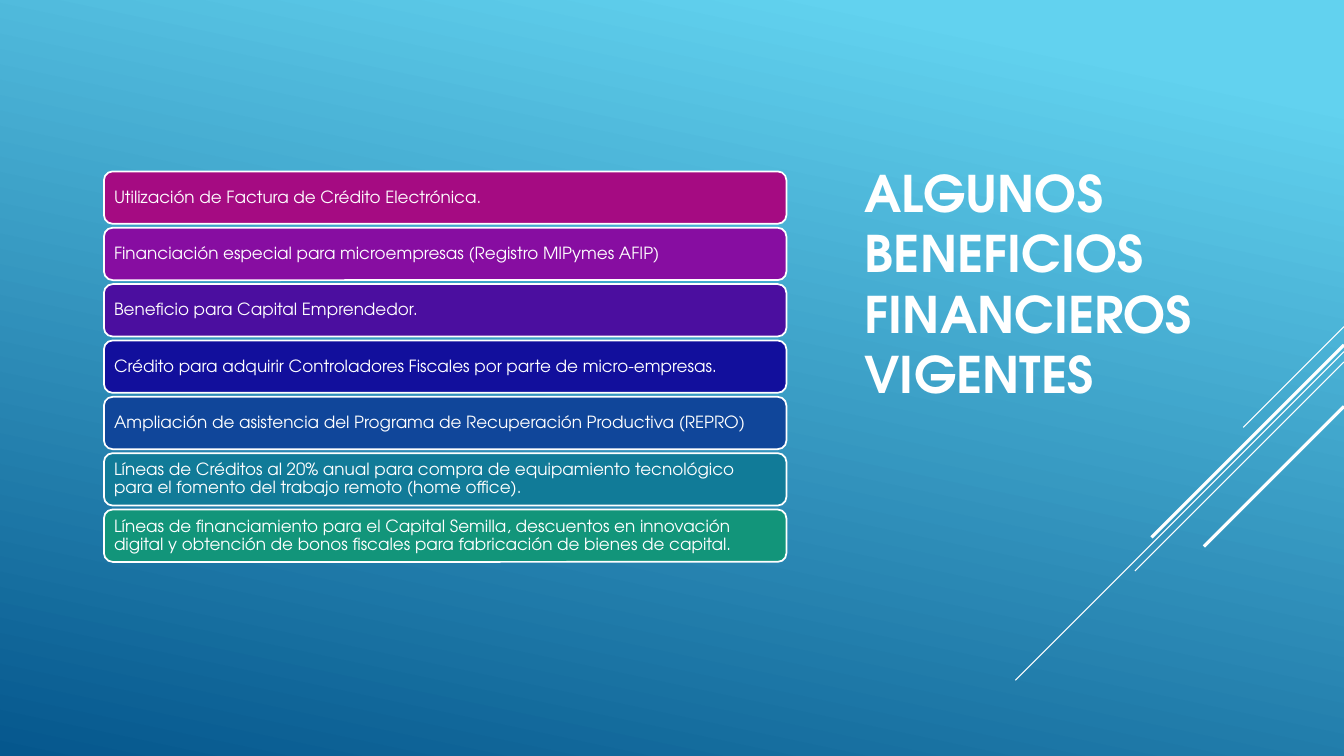
import dataclasses
import pptx
import pptx.dml.color
import pptx.enum.shapes
import pptx.enum.text
import pptx.oxml.ns
import pptx.util
import lxml.etree

Cm = pptx.util.Cm
Pt = pptx.util.Pt
Rgb = pptx.dml.color.RGBColor.from_string
Align = pptx.enum.text.PP_ALIGN
Anchor = pptx.enum.text.MSO_ANCHOR
Fit = pptx.enum.text.MSO_AUTO_SIZE


@dataclasses.dataclass(frozen=True)
class Theme:
    font: str = "TeX Gyre Adventor"
    ink: str = "FFFFFF"
    sky: str = "62D2EF"
    sea: str = "05578D"
    head: int = 36
    body: int = 12
    edge: float = 1.25


WIDE, HIGH = 33.87, 19.05
CARDS = [
    ("A50B82", "Utilización de Factura de Crédito Electrónica."),
    ("870DA1", "Financiación especial para microempresas (Registro MIPymes AFIP)"),
    ("4B0E9F", "Beneficio para Capital Emprendedor."),
    ("120F9C", "Crédito para adquirir Controladores Fiscales por parte de micro-empresas."),
    ("10469A", "Ampliación de asistencia del Programa de Recuperación Productiva (REPRO)"),
    ("117B98", "Líneas de Créditos al 20% anual para compra de equipamiento "
               "tecnológico para el fomento del trabajo remoto (home office)."),
    ("12957A", "Líneas de financiamiento para el Capital Semilla, descuentos en "
               "innovación digital y obtención de bonos fiscales para fabricación "
               "de bienes de capital."),
]
LEFT, TOP, STEP = 2.62, 4.32, 1.42
RAYS = [
    (8.23, 2.54, 0.75),
    (8.86, 8.28, 0.75),
    (9.12, 5.27, 0.75),
    (8.69, 4.85, 2.25),
    (10.24, 3.53, 2.25),
]


def apply(item, form):
    for name, value in form.items():
        setattr(item, name, value)


class Maker:
    def __init__(self, theme, slide):
        self.theme = theme
        self.slide = slide

    def back(self):
        fill = self.slide.background.fill
        fill.gradient()
        fill.gradient_angle = 258
        stops = [(0.1, self.theme.sky), (1, self.theme.sea)]
        for stop, (place, color) in zip(fill.gradient_stops, stops):
            stop.position = place
            stop.color.rgb = Rgb(color)

    def label(self, shape, text, size, bold, space, inset):
        frame = shape.text_frame
        frame.text = text
        side, edge = inset
        apply(frame, {
            "word_wrap": True, "auto_size": Fit.NONE,
            "vertical_anchor": Anchor.MIDDLE,
            "margin_left": Cm(side), "margin_right": Cm(side),
            "margin_top": Cm(edge), "margin_bottom": Cm(edge),
        })
        para = frame.paragraphs[0]
        apply(para, {"alignment": Align.LEFT, "line_spacing": space})
        font = para.runs[0].font
        apply(font, {"name": self.theme.font, "size": Pt(size), "bold": bold})
        font.color.rgb = Rgb(self.theme.ink)

    def title(self, text, left, top, width, height):
        shape = self.slide.shapes.title
        apply(shape, {"left": Cm(left), "top": Cm(top),
                      "width": Cm(width), "height": Cm(height)})
        self.label(shape, text, self.theme.head, True, 1.0, (0.25, 0.13))

    def card(self, text, color, left, top, width, height):
        shape = self.slide.shapes.add_shape(
            pptx.enum.shapes.MSO_SHAPE.ROUNDED_RECTANGLE,
            Cm(left), Cm(top), Cm(width), Cm(height))
        shape.shadow.inherit = False
        shape.fill.solid()
        shape.fill.fore_color.rgb = Rgb(color)
        shape.line.color.rgb = Rgb(self.theme.ink)
        shape.line.width = Pt(self.theme.edge)
        self.label(shape, text, self.theme.body, False, 0.9, (0.19, 0.13))

    def ray(self, top, reach, weight):
        line = self.slide.shapes.add_connector(
            pptx.enum.shapes.MSO_CONNECTOR.STRAIGHT,
            Cm(WIDE), Cm(top), Cm(WIDE - reach), Cm(top + reach))
        line.line.color.rgb = Rgb(self.theme.ink)
        line.line.width = Pt(weight)
        lxml.etree.SubElement(line.element.spPr, pptx.oxml.ns.qn("a:effectLst"))


def main():
    deck = pptx.Presentation()
    apply(deck, {"slide_width": Cm(WIDE), "slide_height": Cm(HIGH)})
    maker = Maker(Theme(), deck.slides.add_slide(deck.slide_layouts[5]))
    maker.back()
    for ray in RAYS:
        maker.ray(*ray)
    maker.title("ALGUNOS BENEFICIOS FINANCIEROS VIGENTES", 21.54, 2.62, 10.77, 9.02)
    for row, (color, text) in enumerate(CARDS):
        maker.card(text, color, LEFT, TOP + row * STEP, 17.2, 1.32)
    deck.save("out.pptx")


if __name__ == "__main__":
    main()
